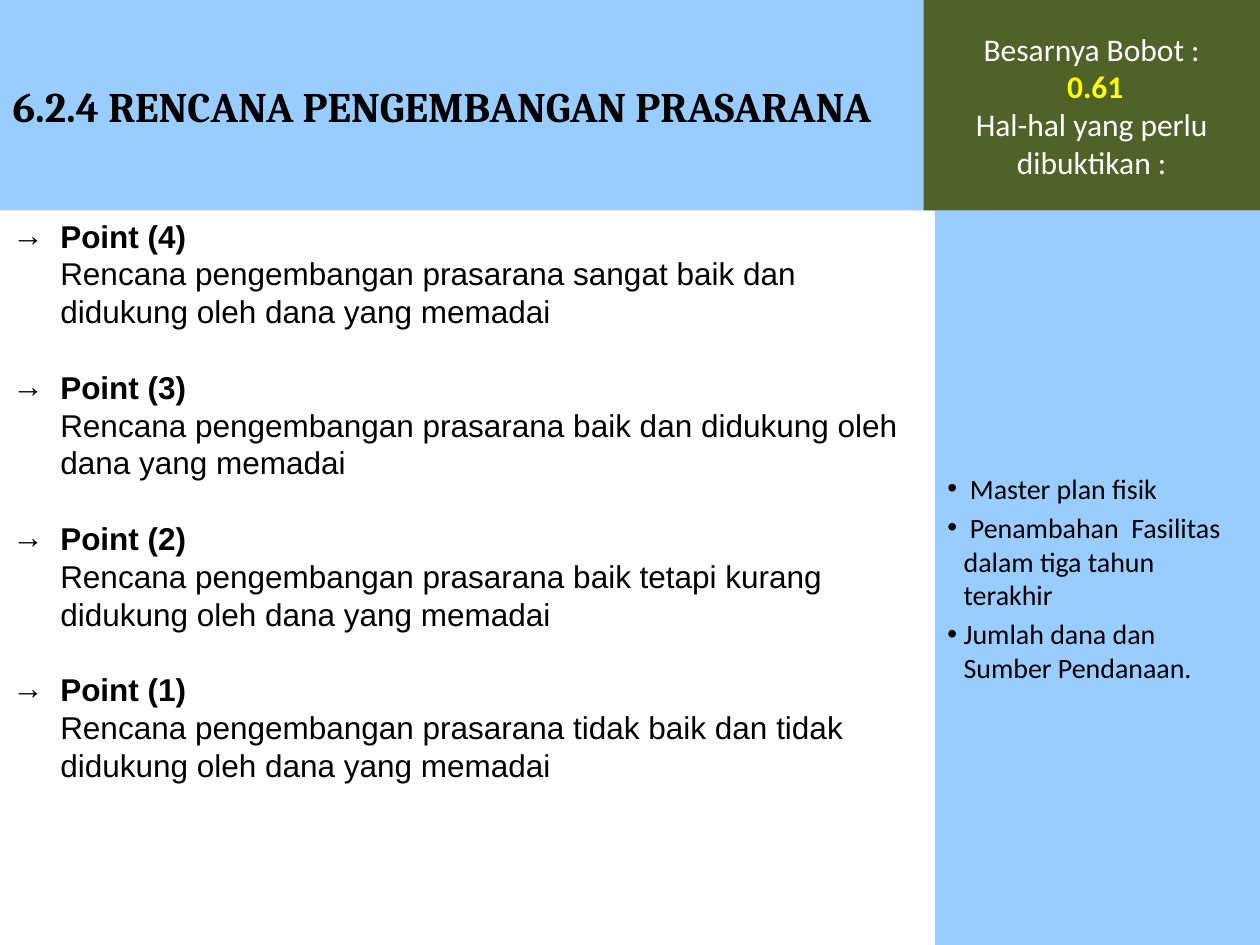
from lxml import etree
from pptx import Presentation
from pptx.dml.color import RGBColor
from pptx.enum.shapes import MSO_SHAPE
from pptx.enum.text import MSO_ANCHOR, MSO_AUTO_SIZE, PP_ALIGN
from pptx.oxml.ns import qn
from pptx.util import Inches, Pt

RECTANGLE = MSO_SHAPE.RECTANGLE
TOP, MIDDLE = MSO_ANCHOR.TOP, MSO_ANCHOR.MIDDLE
LEFT, CENTER = PP_ALIGN.LEFT, PP_ALIGN.CENTER
NO_AUTOFIT = MSO_AUTO_SIZE.NONE

SKY = RGBColor(0x99, 0xCC, 0xFF)
OLIVE = RGBColor(0x4F, 0x62, 0x28)
YELLOW = RGBColor(0xFF, 0xFF, 0x00)
WHITE = RGBColor(0xFF, 0xFF, 0xFF)
BLACK = RGBColor(0, 0, 0)

TITLE = "6.2.4 RENCANA PENGEMBANGAN PRASARANA"
POINTS = [
    ("Point (4)", "Rencana pengembangan prasarana sangat baik dan didukung oleh dana yang memadai"),
    ("Point (3)", "Rencana pengembangan prasarana baik dan didukung oleh dana yang memadai"),
    ("Point (2)", "Rencana pengembangan prasarana baik tetapi kurang didukung oleh dana yang memadai"),
    ("Point (1)", "Rencana pengembangan prasarana tidak baik dan tidak didukung oleh dana yang memadai"),
]
WEIGHT = [
    ("Besarnya Bobot :", WHITE, False),
    (" 0.61", YELLOW, True),
    ("Hal-hal yang perlu dibuktikan :", WHITE, False),
]
EVIDENCE = [
    " Master plan fisik",
    " Penambahan  Fasilitas dalam tiga tahun terakhir",
    "Jumlah dana dan Sumber Pendanaan.",
]

WIDTH, HEIGHT = 10, 7.5
HEADER = 1.67
SIDEBAR_LEFT = 7.42
WEIGHT_LEFT = 7.33
TITLE_WIDTH = 7.83
POINT_LINE = 21.6


def place(shape, left, top, width, height, fill=None, anchor=MIDDLE):
    shape.left, shape.top = Inches(left), Inches(top)
    shape.width, shape.height = Inches(width), Inches(height)
    if fill is not None:
        shape.fill.solid()
        shape.fill.fore_color.rgb = fill
        shape.line.fill.background()
    frame = shape.text_frame
    frame.word_wrap = True
    frame.auto_size = NO_AUTOFIT
    frame.vertical_anchor = anchor
    return frame


def add_panel(page, *bounds, fill):
    panel = page.shapes.add_shape(RECTANGLE, 0, 0, 0, 0)
    panel.shadow.inherit = False
    return place(panel, *bounds, fill=fill)


def write(frame, text, font="Calibri", size=18, color=BLACK, bold=False, align=LEFT,
          margin=0, indent=0, bullet=None, before=0, line=None):
    para = frame.paragraphs[0] if not frame.text else frame.add_paragraph()
    para.alignment = align
    para.space_before = Pt(before)
    if line:
        para.line_spacing = Pt(line)
    properties = para._p.get_or_add_pPr()
    properties.set("marL", str(Inches(margin)))
    properties.set("indent", str(Inches(indent)))
    if bullet:
        etree.SubElement(properties, qn("a:buFont"), typeface="Arial")
        etree.SubElement(properties, qn("a:buChar"), char=bullet)
    span = para.add_run()
    span.text = text
    span.font.name = font
    span.font.size = Pt(size)
    span.font.bold = bold
    span.font.color.rgb = color


def main():
    deck = Presentation()
    deck.slide_width, deck.slide_height = Inches(WIDTH), Inches(HEIGHT)
    page = deck.slides.add_slide(deck.slide_layouts[5])

    title = place(page.shapes.title, 0, 0, TITLE_WIDTH, HEADER, fill=SKY)
    write(title, TITLE, font="Cambria", size=24, bold=True, margin=0.69, indent=-0.69)

    box = page.shapes.add_textbox(0, 0, 0, 0)
    points = place(box, 0, HEADER, SIDEBAR_LEFT, HEIGHT - HEADER, anchor=TOP)
    for number, (heading, description) in enumerate(POINTS):
        write(points, heading, font="Arial", bold=True, margin=0.38, indent=-0.38,
              bullet="→", before=POINT_LINE if number else 0, line=POINT_LINE)
        write(points, description, font="Arial", margin=0.38, line=POINT_LINE)

    evidence = add_panel(page, SIDEBAR_LEFT, HEADER, WIDTH - SIDEBAR_LEFT, HEIGHT - HEADER, fill=SKY)
    for item in EVIDENCE:
        write(evidence, item, size=16, margin=0.13, indent=-0.13, bullet="•", before=3.2)

    weight = add_panel(page, WEIGHT_LEFT, 0, WIDTH - WEIGHT_LEFT, HEADER, fill=OLIVE)
    for text, color, bold in WEIGHT:
        write(weight, text, color=color, bold=bold, align=CENTER)

    deck.save("out.pptx")


if __name__ == "__main__":
    main()
